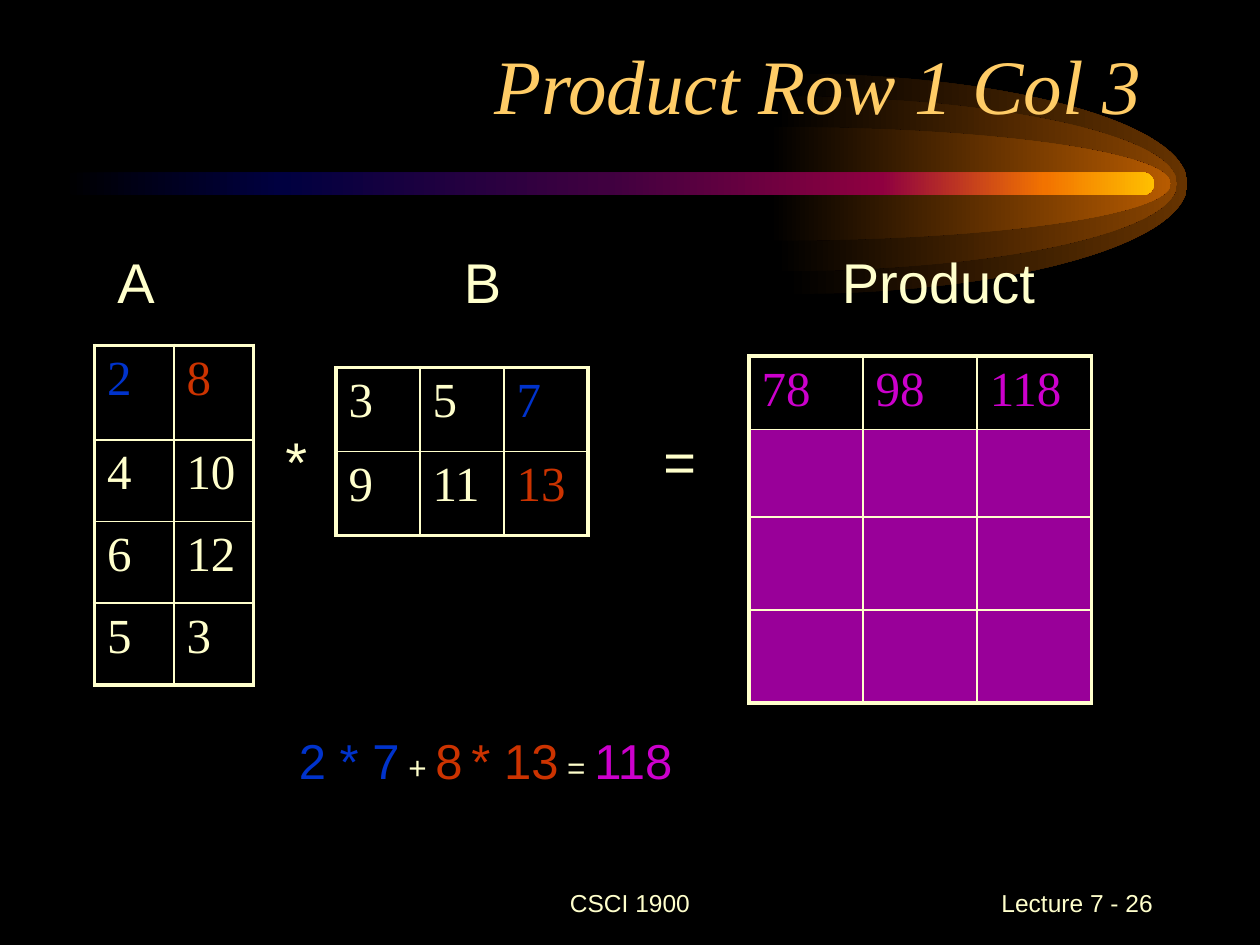
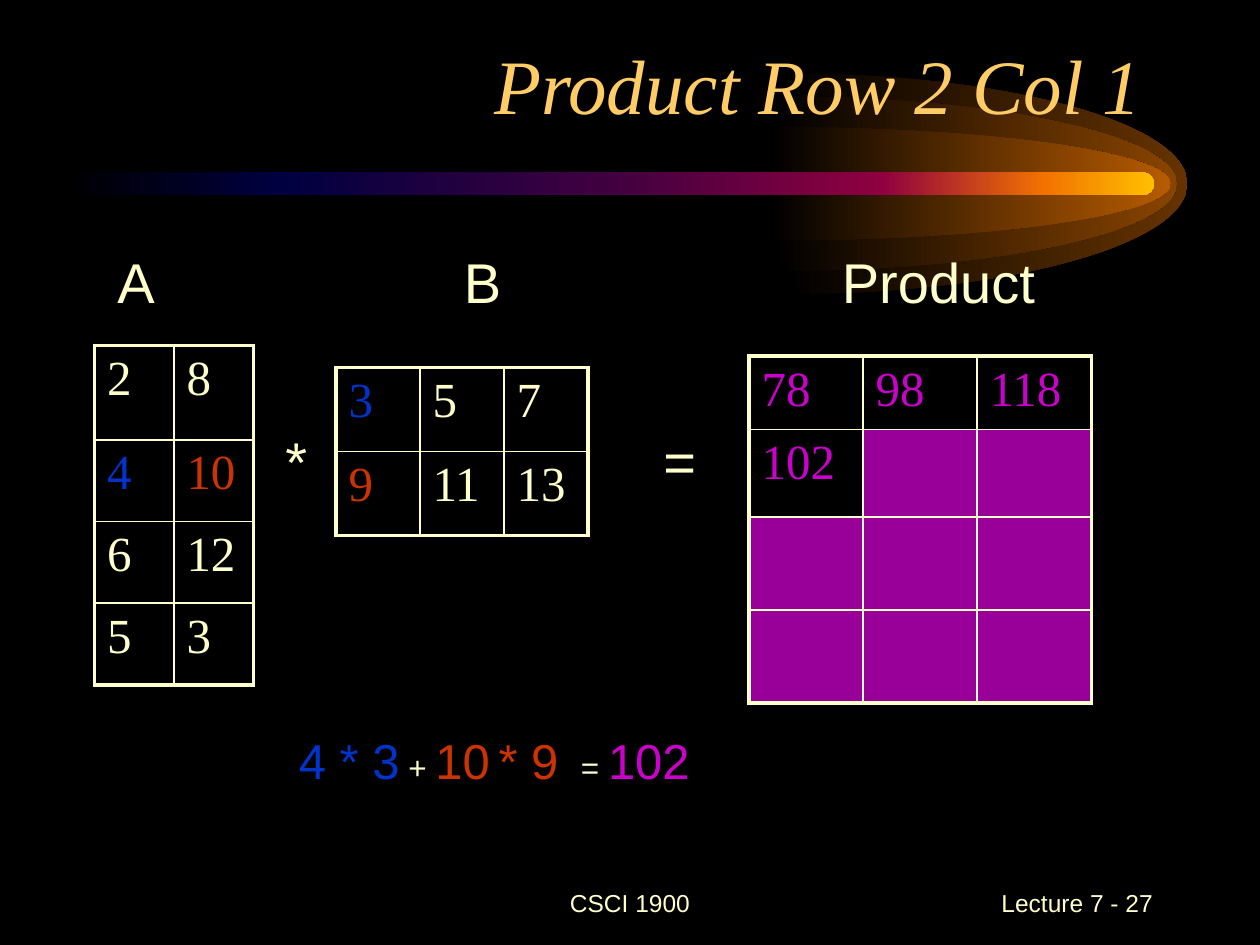
from lxml import etree
from pptx import Presentation
from pptx.dml.color import RGBColor
from pptx.enum.shapes import MSO_SHAPE
from pptx.enum.text import MSO_ANCHOR, MSO_AUTO_SIZE, PP_ALIGN
from pptx.oxml.ns import qn
from pptx.util import Pt

BLACK = RGBColor(0x00, 0x00, 0x00)
CREAM = RGBColor(0xFF, 0xFF, 0xCC)
GOLD = RGBColor(0xFF, 0xCC, 0x66)
BLUE = RGBColor(0x00, 0x33, 0xCC)
RED = RGBColor(0xCC, 0x33, 0x00)
MAGENTA = RGBColor(0xCC, 0x00, 0xCC)
PURPLE = RGBColor(0x99, 0x00, 0x99)
COMET_STOPS = [(0, "000000"), (20, "000040"), (50, "400040"),
               (75, "8F0040"), (90, "F27300"), (100, "FFBF00")]

SANS, SERIF = "Arial", "Times New Roman"
LEFT, CENTER, RIGHT = PP_ALIGN.LEFT, PP_ALIGN.CENTER, PP_ALIGN.RIGHT
TOP, MIDDLE, BOTTOM = MSO_ANCHOR.TOP, MSO_ANCHOR.MIDDLE, MSO_ANCHOR.BOTTOM
NO_FIT, FIT_SHAPE = MSO_AUTO_SIZE.NONE, MSO_AUTO_SIZE.SHAPE_TO_FIT_TEXT
ROUNDED, TITLE_ONLY = MSO_SHAPE.ROUNDED_RECTANGLE, 5

MATRIX_A = [[2, 8], [4, 10], [6, 12], [5, 3]]
MATRIX_B = [[3, 5, 7], [9, 11, 13]]
PRODUCT = [[sum(a * b for a, b in zip(row, col)) for col in zip(*MATRIX_B)]
           for row in MATRIX_A]

# Row and column being multiplied, page number, extra gap before the equals sign
STEPS = [(0, 2, 26, ""), (1, 0, 27, " ")]

# Left, top, width, height, text, wrap
LABELS = [
    (156, 240, 27, 45, "*", False),
    (372, 240, 55, 45, "=", True),
    (60, 138, 36, 45, "A", False),
    (258, 138, 36, 45, "B", False),
    (474, 138, 126, 45, "Product", False),
]


def add_text(slide, box, runs, wrap=True, align=LEFT, anchor=TOP, fit=FIT_SHAPE):
    """Add a text box; runs are (text, size, colour)."""
    frame = slide.shapes.add_textbox(*map(Pt, box)).text_frame
    frame.word_wrap = wrap
    frame.auto_size = fit
    frame.vertical_anchor = anchor
    paragraph = frame.paragraphs[0]
    paragraph.alignment = align
    for text, size, colour in runs:
        run = paragraph.add_run()
        run.text = text
        run.font.name = SANS
        run.font.size = Pt(size)
        run.font.color.rgb = colour


def add_matrix(slide, left, top, col_width, row_heights, values, colours):
    """Add a bordered table; a cell without a colour is hidden behind purple."""
    last_row, last_col = len(values) - 1, len(values[0]) - 1
    table = slide.shapes.add_table(
        last_row + 1, last_col + 1, Pt(left), Pt(top),
        Pt(col_width * (last_col + 1)), Pt(sum(row_heights))).table
    table.first_row = table.horz_banding = False
    for column in table.columns:
        column.width = Pt(col_width)
    for r, height in enumerate(row_heights):
        table.rows[r].height = Pt(height)
        for c, value in enumerate(values[r]):
            cell, colour = table.cell(r, c), colours[r][c]
            cell.fill.solid()
            cell.fill.fore_color.rgb = BLACK if colour else PURPLE
            if colour:
                cell.text_frame.text = str(value)
                font = cell.text_frame.paragraphs[0].runs[0].font
                font.name, font.size = SERIF, Pt(28)
                font.color.rgb = colour
            outer_edges = [("a:lnL", c == 0), ("a:lnR", c == last_col),
                           ("a:lnT", r == 0), ("a:lnB", r == last_row)]
            properties = cell._tc.get_or_add_tcPr()
            for position, (tag, is_outer) in enumerate(outer_edges):
                line = etree.Element(qn(tag), w=str(Pt(2.25 if is_outer else 1)))
                solid = etree.SubElement(line, qn("a:solidFill"))
                etree.SubElement(solid, qn("a:srgbClr"), val=str(CREAM))
                properties.insert(position, line)


prs = Presentation()
prs.slide_width, prs.slide_height = Pt(720), Pt(540)
layout = prs.slide_layouts[TITLE_ONLY]
layout.background.fill.solid()
layout.background.fill.fore_color.rgb = BLACK
for placeholder in list(layout.placeholders):
    if placeholder.placeholder_format.idx != 0:
        placeholder.element.getparent().remove(placeholder.element)

slides = [prs.slides.add_slide(layout) for _ in STEPS]

# The comet is drawn once and moved to the layout.
# Each glow is a half ellipse: two straight sides turned into quarter arcs.
comet = []
reach, bend = 229, 0.55
for left, half, colour in [(449.5, 63, "663300"), (443.5, 50, "894400"),
                           (440, 32.5, "B75B00")]:
    builder = slides[0].shapes.build_freeform(Pt(left), Pt(105 - half))
    builder.add_line_segments([(Pt(left + reach), Pt(105)), (Pt(left), Pt(105 + half))])
    glow = builder.convert_to_shape()
    arcs = [[(bend * reach, 0), (reach, half * (1 - bend)), (reach, half)],
            [(reach, half * (1 + bend)), (bend * reach, 2 * half), (0, 2 * half)]]
    for side, arc in zip(list(glow.element.iter(qn("a:lnTo"))), arcs):
        curve = etree.Element(qn("a:cubicBezTo"))
        for x, y in arc:
            etree.SubElement(curve, qn("a:pt"), x=str(Pt(x)), y=str(Pt(y)))
        side.getparent().replace(side, curve)
    comet.append((glow, [(0, "000000"), (100, colour)]))
streak = slides[0].shapes.add_shape(ROUNDED, Pt(36), Pt(98.5), Pt(623.5), Pt(13))
streak.adjustments[0] = 0.5
comet.append((streak, COMET_STOPS))

for part, stops in comet:
    part.shadow.inherit = False
    part.line.fill.background()
    part.fill.gradient()
    part.fill.gradient_angle = 0
    stop_list = part.element.spPr.find(qn("a:gradFill")).find(qn("a:gsLst"))
    for default_stop in list(stop_list):
        stop_list.remove(default_stop)
    for percent, colour in stops:
        stop = etree.SubElement(stop_list, qn("a:gs"), pos=str(percent * 1000))
        etree.SubElement(stop, qn("a:srgbClr"), val=colour)
    layout.shapes.element.append(part.element)

for slide, (row, col, page, gap) in zip(slides, STEPS):
    title = slide.shapes.title
    title.left, title.top, title.width, title.height = map(Pt, (48, 18, 612, 60))
    title.text_frame.text = f"Product Row {row + 1} Col {col + 1}"
    title.text_frame.vertical_anchor = BOTTOM
    title.text_frame.auto_size = NO_FIT
    heading = title.text_frame.paragraphs[0]
    heading.alignment = RIGHT
    font = heading.runs[0].font
    font.name, font.size, font.italic = SERIF, Pt(44), True
    font.color.rgb = GOLD

    add_text(slide, (246, 498, 228, 36), [("CSCI 1900", 14, CREAM)],
             align=CENTER, anchor=MIDDLE, fit=NO_FIT)
    add_text(slide, (516, 498, 150, 36), [(f" Lecture 7 - {page}", 14, CREAM)],
             align=RIGHT, anchor=MIDDLE, fit=NO_FIT)

    a_colours = [[BLUE, RED] if r == row else [CREAM, CREAM] for r in range(4)]
    b_colours = [[colour if c == col else CREAM for c in range(3)]
                 for colour in (BLUE, RED)]
    product_colours = [[MAGENTA if (r, c) <= (row, col) else None for c in range(3)]
                       for r in range(4)]
    add_matrix(slide, 54, 197.3, 45.4, [54, 46.7, 46.7, 46.7], MATRIX_A, a_colours)
    add_matrix(slide, 192, 210, 48, [48, 48], MATRIX_B, b_colours)
    add_matrix(slide, 428, 203.5, 65.2, [42, 50, 53.2, 53.2], PRODUCT, product_colours)

    for *box, text, wrap in LABELS:
        add_text(slide, box, [(text, 32, CREAM)], wrap)

    (a1, a2), (b1, b2) = MATRIX_A[row], [line[col] for line in MATRIX_B]
    add_text(slide, (156, 414, 282, 41), [
        (f" {a1} * {b1}", 28, BLUE), (" + ", 18, CREAM),
        (f"{a2}", 28, RED), (" ", 18, CREAM), (f"* {b2}{gap}", 28, RED),
        (" = ", 18, CREAM), (f"{PRODUCT[row][col]}", 28, MAGENTA)])

prs.save("out.pptx")
